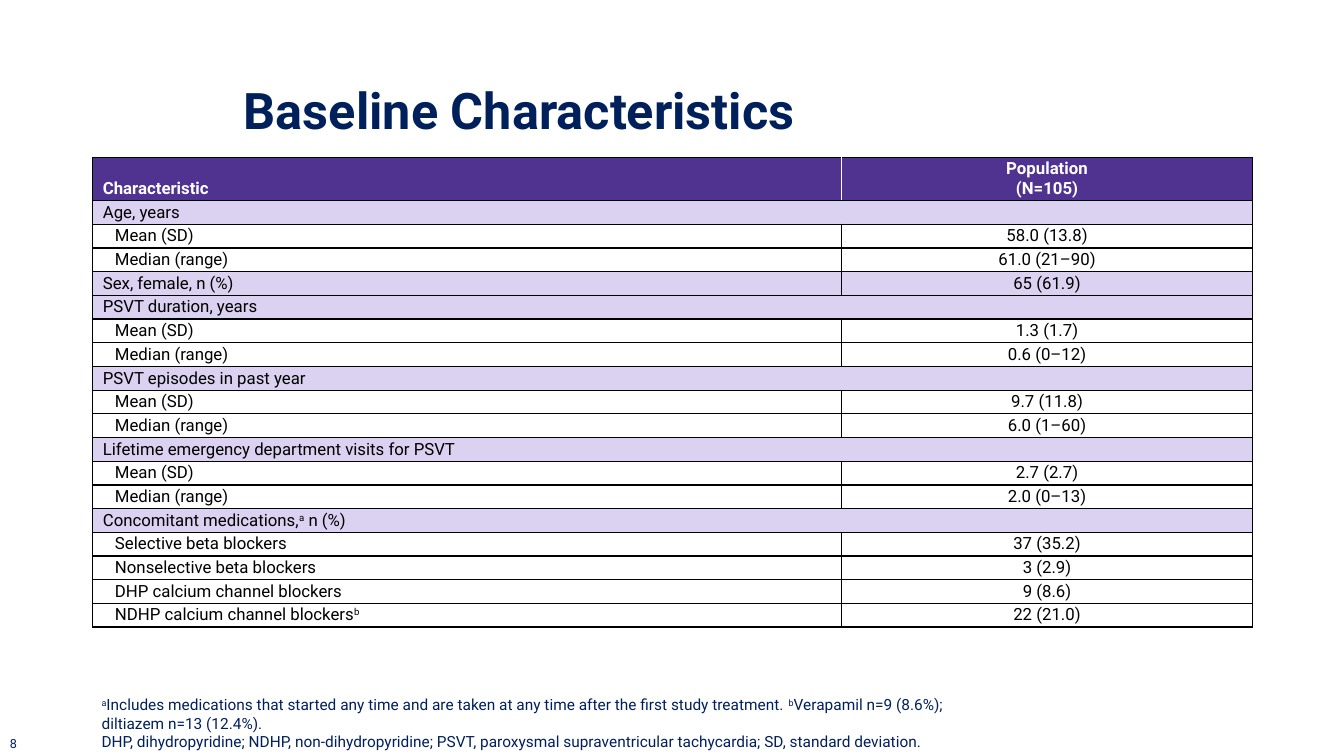
import dataclasses

import lxml.etree
import pptx
import pptx.dml.color
import pptx.enum.text
import pptx.oxml.ns
import pptx.util

SCALE = 9144
FONT = "Roboto"
NAVY, BLACK, WHITE = "00205C", "000000", "FFFFFF"
PURPLE, LILAC = "503291", "DBD1F0"
ALIGN = pptx.enum.text.PP_ALIGN
ANCHOR = pptx.enum.text.MSO_ANCHOR


@dataclasses.dataclass
class Row:
    label: str
    value: str = ""
    group: bool = False


@dataclasses.dataclass
class Note:
    box: tuple[int, int, int, int]
    lines: list[str]
    size: int
    bold: bool = False
    anchor: ANCHOR = ANCHOR.TOP
    space: float = 1.0
    wrap: bool = True


def stats(title: str, mean: str, median: str) -> list[Row]:
    """Return a group heading with its mean and median rows."""
    return [Row(title, group=True), Row("Mean (SD)", mean), Row("Median (range)", median)]


ROWS = [
    *stats("Age, years", "58.0 (13.8)", "61.0 (21–90)"),
    Row("Sex, female, n (%)", "65 (61.9)", True),
    *stats("PSVT duration, years", "1.3 (1.7)", "0.6 (0–12)"),
    *stats("PSVT episodes in past year", "9.7 (11.8)", "6.0 (1–60)"),
    *stats("Lifetime emergency department visits for PSVT", "2.7 (2.7)", "2.0 (0–13)"),
    Row("Concomitant medications,^a^ n (%)", group=True),
    Row("Selective beta blockers", "37 (35.2)"),
    Row("Nonselective beta blockers", "3 (2.9)"),
    Row("DHP calcium channel blockers", "9 (8.6)"),
    Row("NDHP calcium channel blockers^b^", "22 (21.0)"),
]

NOTES = [
    Note((232, 40, 1010, 145), ["Baseline Characteristics"], 36, True, ANCHOR.MIDDLE, 0.9),
    Note(
        (91, 684, 936, 66),
        [
            "^a^Includes medications that started any time and are taken at any time after "
            "the first study treatment. ^b^Verapamil n=9 (8.6%); \vdiltiazem n=13 (12.4%).",
            "DHP, dihydropyridine; NDHP, non-dihydropyridine; PSVT, paroxysmal "
            "supraventricular tachycardia; SD, standard deviation.",
        ],
        11,
        anchor=ANCHOR.BOTTOM,
    ),
    Note((0, 725, 27, 25), ["8"], 9, wrap=False),
]


def px(count: int) -> pptx.util.Emu:
    """Turn px into EMU."""
    return pptx.util.Emu(count * SCALE)


def rgb(code: str) -> pptx.dml.color.RGBColor:
    """Turn a hex string into a colour."""
    return pptx.dml.color.RGBColor.from_string(code)


def write(para, text: str, size: int, color: str, bold: bool = False) -> None:
    """Fill a paragraph, raising the parts between carets."""
    for index, part in enumerate(text.split("^")):
        for turn, piece in enumerate(part.split("\v")):
            if turn:
                para.add_line_break()
            if piece:
                run = para.add_run()
                run.text = piece
                if index % 2:
                    run._r.get_or_add_rPr().set("baseline", "30000")
    para.font.name = FONT
    para.font.size = pptx.util.Pt(size)
    para.font.bold = bold
    para.font.color.rgb = rgb(color)


def border(cell, **sides: str) -> None:
    """Draw one-point cell borders, black unless a side is named."""
    props = cell._tc.get_or_add_tcPr()
    for index, side in enumerate("LRTB"):
        line = lxml.etree.Element(pptx.oxml.ns.qn(f"a:ln{side}"), w="12700")
        fill = lxml.etree.SubElement(line, pptx.oxml.ns.qn("a:solidFill"))
        lxml.etree.SubElement(fill, pptx.oxml.ns.qn("a:srgbClr"), val=sides.get(side, BLACK))
        props.insert(index, line)


def style(cell, fill: str, **sides: str) -> None:
    """Set the margins, fill and borders of a cell."""
    cell.margin_left = cell.margin_right = px(10)
    cell.margin_top = cell.margin_bottom = px(2)
    cell.fill.solid()
    cell.fill.fore_color.rgb = rgb(fill)
    border(cell, **sides)


def add_grid(slide) -> None:
    """Add the table of characteristics."""
    frame = slide.shapes.add_table(len(ROWS) + 1, 2, px(92), px(156), px(1150), px(476))
    table = frame.table
    for column, width in zip(table.columns, (743, 407)):
        column.width = px(width)
    for index, line in enumerate(table.rows):
        line.height = px(23 if index else 43)

    left, right = table.rows[0].cells
    style(left, PURPLE, R=WHITE)
    style(right, PURPLE, L=WHITE)
    left.vertical_anchor = ANCHOR.BOTTOM
    write(left.text_frame.paragraphs[0], "Characteristic", 12, WHITE, True)
    head = right.text_frame.paragraphs[0]
    head.alignment = ALIGN.CENTER
    write(head, " Population \v(N=105)", 12, WHITE, True)

    for index, row in enumerate(ROWS, 1):
        left, right = table.rows[index].cells
        for cell in (left, right):
            style(cell, LILAC if row.group else WHITE)
        label, value = (cell.text_frame.paragraphs[0] for cell in (left, right))
        if not row.group:
            label._p.get_or_add_pPr().set("marL", str(px(12)))
        write(label, row.label, 12, BLACK)
        value.alignment = ALIGN.CENTER
        write(value, row.value, 12, BLACK)
        if not row.value:
            left.merge(right)


def add_note(slide, note: Note) -> None:
    """Add a text box."""
    frame = slide.shapes.add_textbox(*map(px, note.box)).text_frame
    frame.word_wrap = note.wrap
    frame.vertical_anchor = note.anchor
    for index, text in enumerate(note.lines):
        para = frame.add_paragraph() if index else frame.paragraphs[0]
        para.line_spacing = note.space
        write(para, text, note.size, NAVY, note.bold)


def main() -> None:
    """Build and save the slide."""
    deck = pptx.Presentation()
    deck.slide_width, deck.slide_height = px(1333), px(750)
    slide = deck.slides.add_slide(deck.slide_layouts[6])
    add_grid(slide)
    for note in NOTES:
        add_note(slide, note)
    deck.save("out.pptx")


if __name__ == "__main__":
    main()
